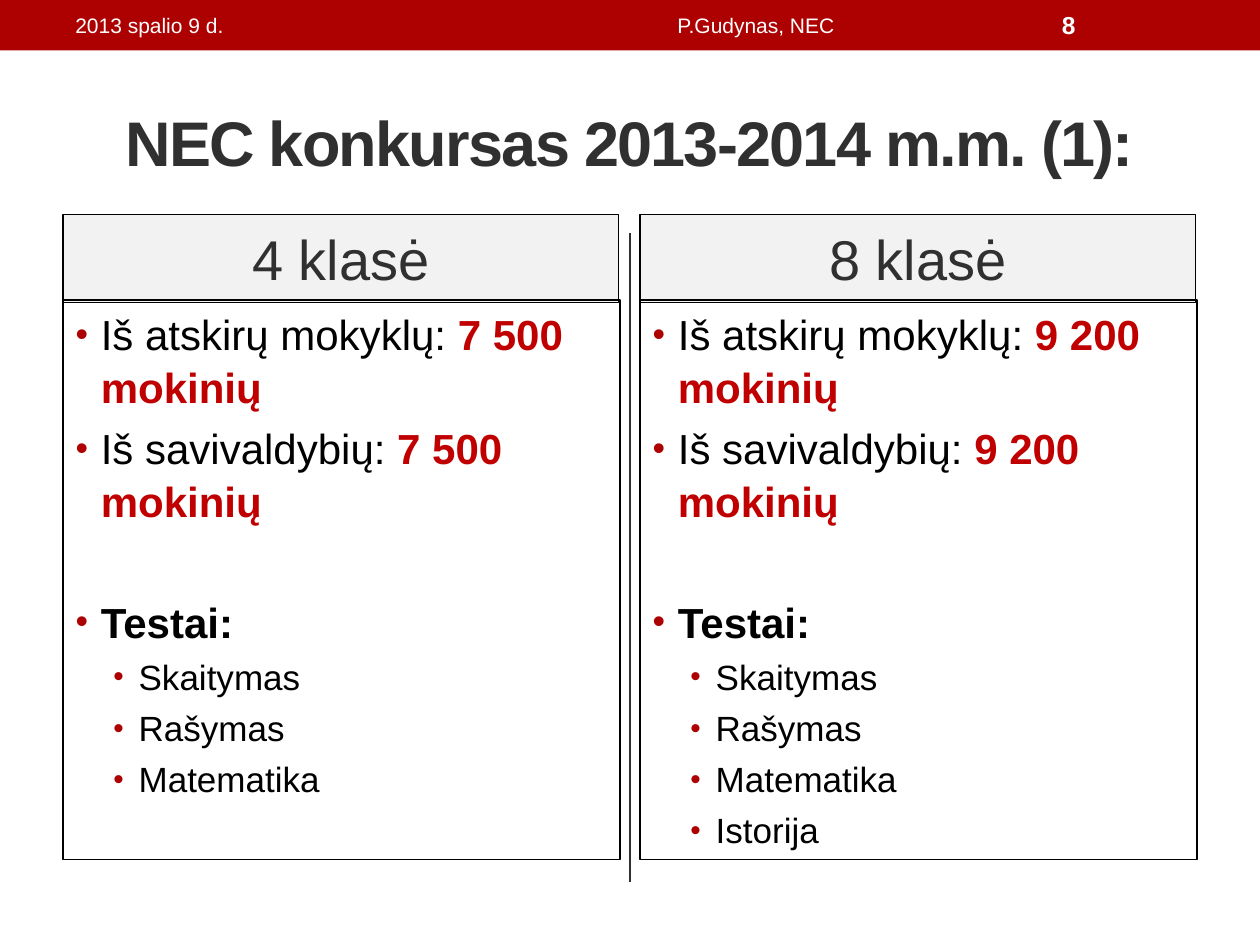
from lxml import etree
from pptx import Presentation
from pptx import util as u
from pptx.dml.color import RGBColor
from pptx.enum import shapes, text
from pptx.oxml.ns import qn

RED = RGBColor(0xAD, 0x01, 0x01)
FIGURE_RED = RGBColor(0xC0, 0x00, 0x00)
CHARCOAL = RGBColor(0x30, 0x30, 0x30)
PALE_GREY = RGBColor(0xF2, 0xF2, 0xF2)
BLACK = RGBColor(0, 0, 0)
WHITE = RGBColor(0xFF, 0xFF, 0xFF)
FONT = "Arial"

# Left edge, heading, number of pupils, tests
COLUMNS = [
    (0.5, "4 klasė", "7 500 mokinių", ["Skaitymas", "Rašymas", "Matematika"]),
    (5.08, "8 klasė", "9 200 mokinių",
     ["Skaitymas", "Rašymas", "Matematika", "Istorija"]),
]
# Left edge, width, wording, size, bold, alignment
BAND_TEXTS = [
    (0.5, 3.17, "2013 spalio 9 d.", 12, False, text.PP_ALIGN.LEFT),
    (3.75, 4.5, "P.Gudynas, NEC", 12, False, text.PP_ALIGN.CENTER),
    (8.33, 1.17, "8", 14, True, text.PP_ALIGN.LEFT),
]


def place(shape, left, top, width, height):
    shape.left, shape.top = u.Inches(left), u.Inches(top)
    shape.width, shape.height = u.Inches(width), u.Inches(height)


def style_span(span, size, color, bold=False):
    span.font.name = FONT
    span.font.size = u.Pt(size)
    span.font.color.rgb = color
    span.font.bold = bold


def set_line(shape, wording, size, color, bold=False,
             align=text.PP_ALIGN.CENTER):
    """Fill a shape with one vertically centred line of text."""
    frame = shape.text_frame
    frame.text = wording
    frame.word_wrap = True
    frame.auto_size = text.MSO_AUTO_SIZE.NONE
    frame.vertical_anchor = text.MSO_ANCHOR.MIDDLE
    para = frame.paragraphs[0]
    para.alignment = align
    para.space_before = u.Pt(0)
    style_span(para.runs[0], size, color, bold)


def outline(shape):
    shape.line.color.rgb = BLACK
    shape.line.width = u.Pt(0.75)


def add_bullet(para, indent):
    properties = para._p.get_or_add_pPr()
    properties.set("marL", str(u.Inches(indent)))
    properties.set("indent", str(u.Inches(-0.2)))
    color = etree.SubElement(properties, qn("a:buClr"))
    etree.SubElement(color, qn("a:srgbClr"), val=str(RED))
    etree.SubElement(properties, qn("a:buSzPct"), val="85000")
    etree.SubElement(properties, qn("a:buFont"), typeface=FONT)
    etree.SubElement(properties, qn("a:buChar"), char="•")


def add_band(page):
    band = page.shapes.add_shape(
        shapes.MSO_SHAPE.RECTANGLE, 0, 0, u.Inches(10), u.Inches(0.4))
    band.shadow.inherit = False
    band.fill.solid()
    band.fill.fore_color.rgb = RED
    band.line.fill.background()
    for left, width, wording, size, bold, align in BAND_TEXTS:
        box = page.shapes.add_textbox(
            u.Inches(left), u.Inches(0.02), u.Inches(width), u.Inches(0.36))
        set_line(box, wording, size, WHITE, bold, align)


def add_divider(page):
    divider = page.shapes.add_connector(
        shapes.MSO_CONNECTOR.STRAIGHT,
        u.Inches(5), u.Inches(1.85), u.Inches(5), u.Inches(7))
    divider.line.color.rgb = CHARCOAL
    divider.line.width = u.Pt(1.5)
    etree.SubElement(divider._element.spPr, qn("a:effectLst"))


def fill_title(title):
    place(title, 0.5, 0.58, 9, 1.08)
    set_line(title, "NEC konkursas 2013-2014 m.m. (1):", 36, CHARCOAL, True)
    span = title.text_frame.paragraphs[0].runs[0]
    span.font._element.set("spc", "-100")


def fill_heading(heading, left, wording):
    place(heading, left, 1.7, 4.41, 0.7)
    heading.fill.solid()
    heading.fill.fore_color.rgb = PALE_GREY
    outline(heading)
    set_line(heading, wording, 32, CHARCOAL)


def fill_list(body, left, pupils, tests):
    place(body, left, 2.38, 4.42, 4.44)
    outline(body)
    frame = body.text_frame
    frame.word_wrap = True
    frame.auto_size = text.MSO_AUTO_SIZE.NONE

    # Level, space before, spans of (wording, colour, bold)
    items = [
        (0, 0, [("Iš atskirų mokyklų: ", BLACK, False),
                (pupils, FIGURE_RED, True)]),
        (0, 4.8, [("Iš savivaldybių: ", BLACK, False),
                  (pupils, FIGURE_RED, True)]),
        (0, 38.6, [("Testai:", BLACK, True)]),
    ]
    items += [(1, 4, [(test, BLACK, False)]) for test in tests]

    for number, (level, gap, spans) in enumerate(items):
        para = frame.add_paragraph() if number else frame.paragraphs[0]
        add_bullet(para, 0.5 if level else 0.2)
        para.level = level
        para.line_spacing = 1.05
        para.space_before = u.Pt(gap)
        for wording, color, bold in spans:
            span = para.add_run()
            span.text = wording
            style_span(span, 20 if level else 24, color, bold)


def main():
    deck = Presentation()
    deck.slide_width, deck.slide_height = u.Inches(10), u.Inches(7.5)
    page = deck.slides.add_slide(deck.slide_layouts.get_by_name("Comparison"))

    add_band(page)
    add_divider(page)
    fill_title(page.shapes.title)

    # Heading and list placeholders come in pairs: 1 and 2, 3 and 4
    holders = {holder.placeholder_format.idx: holder
               for holder in page.placeholders}
    for number, (left, grade, pupils, tests) in enumerate(COLUMNS):
        fill_heading(holders[2 * number + 1], left, grade)
        fill_list(holders[2 * number + 2], left, pupils, tests)

    deck.save("out.pptx")


if __name__ == "__main__":
    main()
